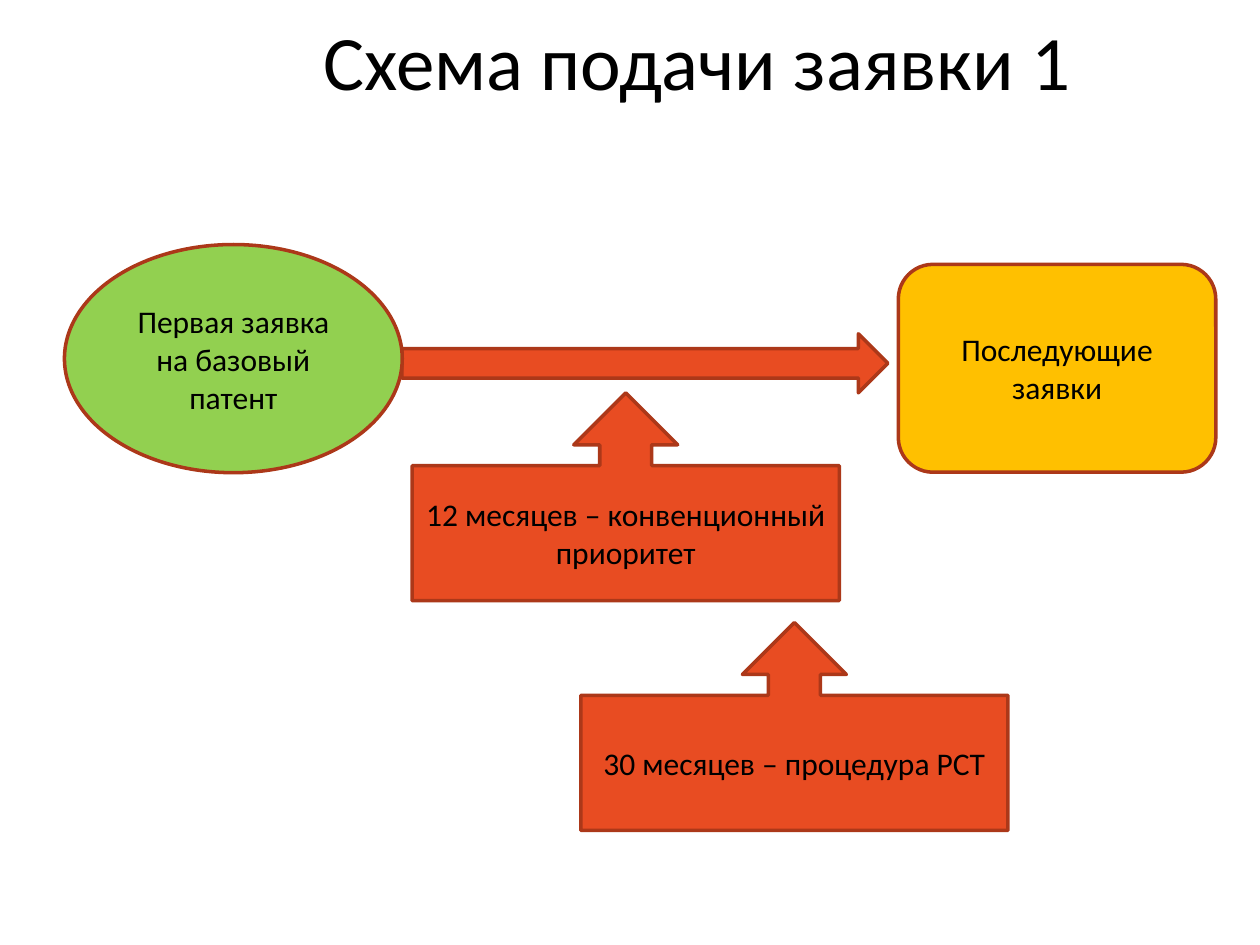
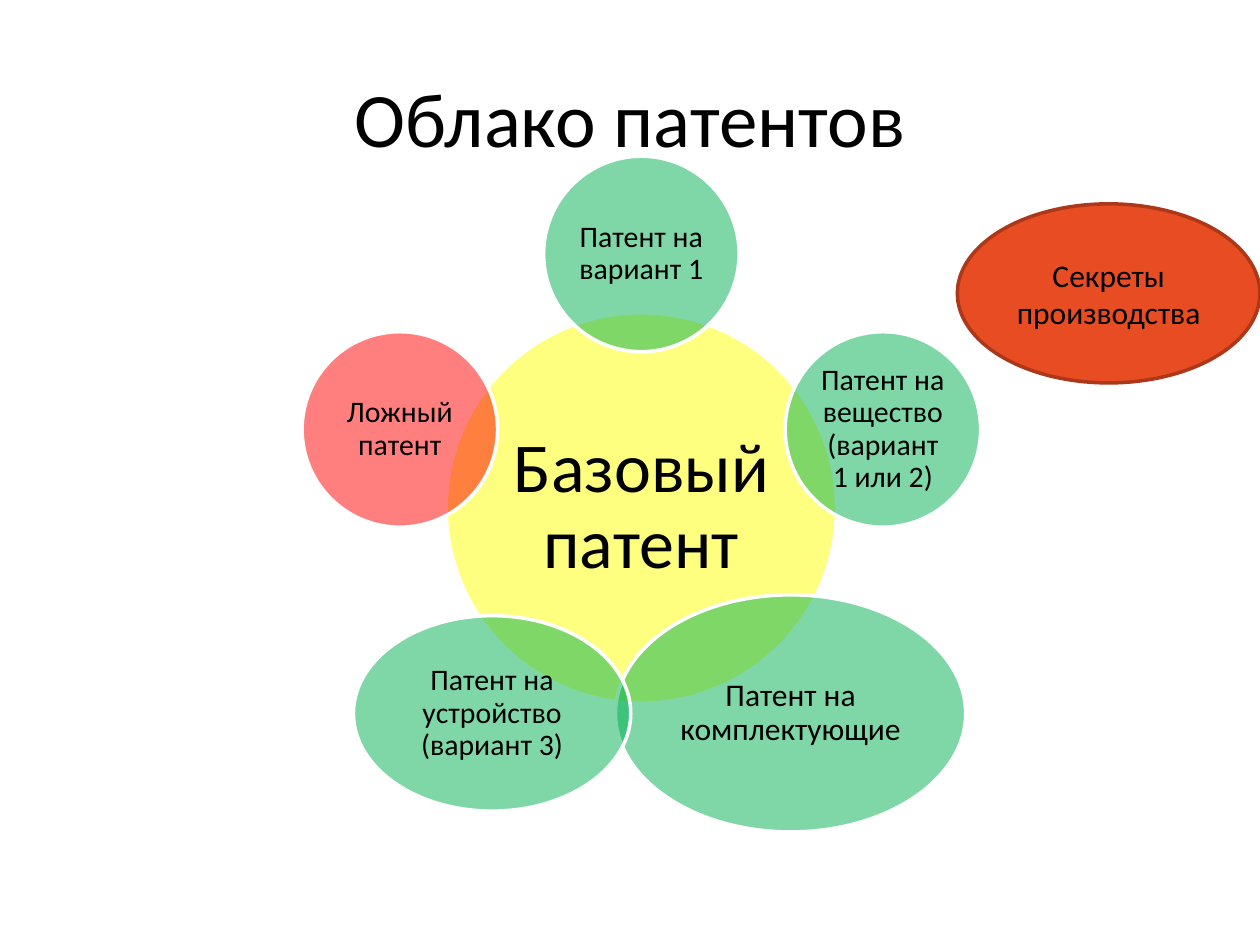
from math import cos, radians, sin

from lxml import etree
from pptx import Presentation
from pptx.dml.color import RGBColor
from pptx.enum.shapes import MSO_SHAPE
from pptx.enum.text import MSO_ANCHOR, PP_ALIGN
from pptx.oxml.ns import qn
from pptx.util import Cm, Pt

FONT = "Calibri"
COLORS = {
    "text": "000000",
    "red": "E84C22",
    "outline": "AC3819",
    "lime": "92D050",
    "amber": "FFC000",
    "yellow": "FFFF00",
    "green": "00B050",
    "false": "FF0000",
    "white": "FFFFFF",
}


def add_text(sp, text, size, spacing=None, inset=None):
    tf = sp.text_frame
    tf.word_wrap = True
    tf.vertical_anchor = MSO_ANCHOR.MIDDLE
    if inset is not None:
        tf.margin_left = tf.margin_right = Cm(inset)
        tf.margin_top = tf.margin_bottom = Cm(inset)
    p = tf.paragraphs[0]
    p.alignment = PP_ALIGN.CENTER
    if spacing:
        p.line_spacing = spacing
    r = p.add_run()
    r.text = text
    r.font.name = FONT
    r.font.size = Pt(size)
    r.font.color.rgb = RGBColor.from_string(COLORS["text"])


def add_figure(s, kind, box, fill, line="outline", alpha=None):
    sp = s.shapes.add_shape(kind, *[Cm(v) for v in box])
    sp.shadow.inherit = False
    sp.fill.solid()
    sp.fill.fore_color.rgb = RGBColor.from_string(COLORS[fill])
    sp.line.color.rgb = RGBColor.from_string(COLORS[line])
    sp.line.width = Pt(2)
    if alpha:
        clr = sp._element.spPr.find(qn("a:solidFill"))[0]
        etree.SubElement(clr, qn("a:alpha")).set("val", str(alpha * 1000))
    return sp


prs = Presentation()
prs.slide_width = Cm(25.4)
prs.slide_height = Cm(19.05)

titles = [
    ("Схема подачи заявки 1", (3.63, 0.71, 20.85, 0.99)),
    ("Облако патентов", (1.27, 0.76, 22.86, 3.18)),
]
slides = []
for title, box in titles:
    s = prs.slides.add_slide(prs.slide_layouts[6])
    add_text(s.shapes.add_textbox(*[Cm(v) for v in box]), title, 44)
    slides.append(s)
scheme, cloud = slides

add_figure(scheme, MSO_SHAPE.RIGHT_ARROW, (8.1, 6.73, 9.8, 1.19), "red")
steps = [
    (MSO_SHAPE.OVAL, (1.3, 4.93, 6.81, 4.6), "lime", "Первая заявка на базовый патент"),
    (MSO_SHAPE.ROUNDED_RECTANGLE, (18.11, 5.33, 6.4, 4.19), "amber", "Последующие заявки"),
    (MSO_SHAPE.UP_ARROW_CALLOUT, (8.31, 7.92, 8.61, 4.19), "red",
     "12 месяцев – конвенционный приоритет"),
    (MSO_SHAPE.UP_ARROW_CALLOUT, (11.71, 12.55, 8.61, 4.19), "red",
     "30 месяцев – процедура РСТ"),
]
for kind, box, fill, text in steps:
    add_text(add_figure(scheme, kind, box, fill), text, 18)

center_x, center_y, orbit = 12.93, 10.24, 5.12
base, small = 7.87, 3.94
box = (center_x - base / 2, center_y - base / 2, base, base)
sp = add_figure(cloud, MSO_SHAPE.OVAL, box, "yellow", "white", 50)
add_text(sp, "Базовый патент", 40, 0.9, 0.14)

patents = [
    ("Патент на вариант 1", small, small, "green", 17),
    ("Патент на вещество (вариант 1 или 2)", small, small, "green", 17),
    ("Патент на комплектующие", 7.06, 4.78, "green", 18),
    ("Патент на устройство (вариант 3)", 5.59, small, "green", 17),
    ("Ложный патент", small, small, "false", 17),
]
for i, (text, w, h, fill, size) in enumerate(patents):
    angle = radians(i * 360 / len(patents))
    x = center_x + orbit * sin(angle) - w / 2
    y = center_y - orbit * cos(angle) - h / 2
    sp = add_figure(cloud, MSO_SHAPE.OVAL, (x, y, w, h), fill, "white", 50)
    add_text(sp, text, size, 0.9, 0.06)

sp = add_figure(cloud, MSO_SHAPE.OVAL, (19.3, 4.11, 6.1, 3.61), "red")
add_text(sp, "Секреты производства", 18)

prs.save("out.pptx")
